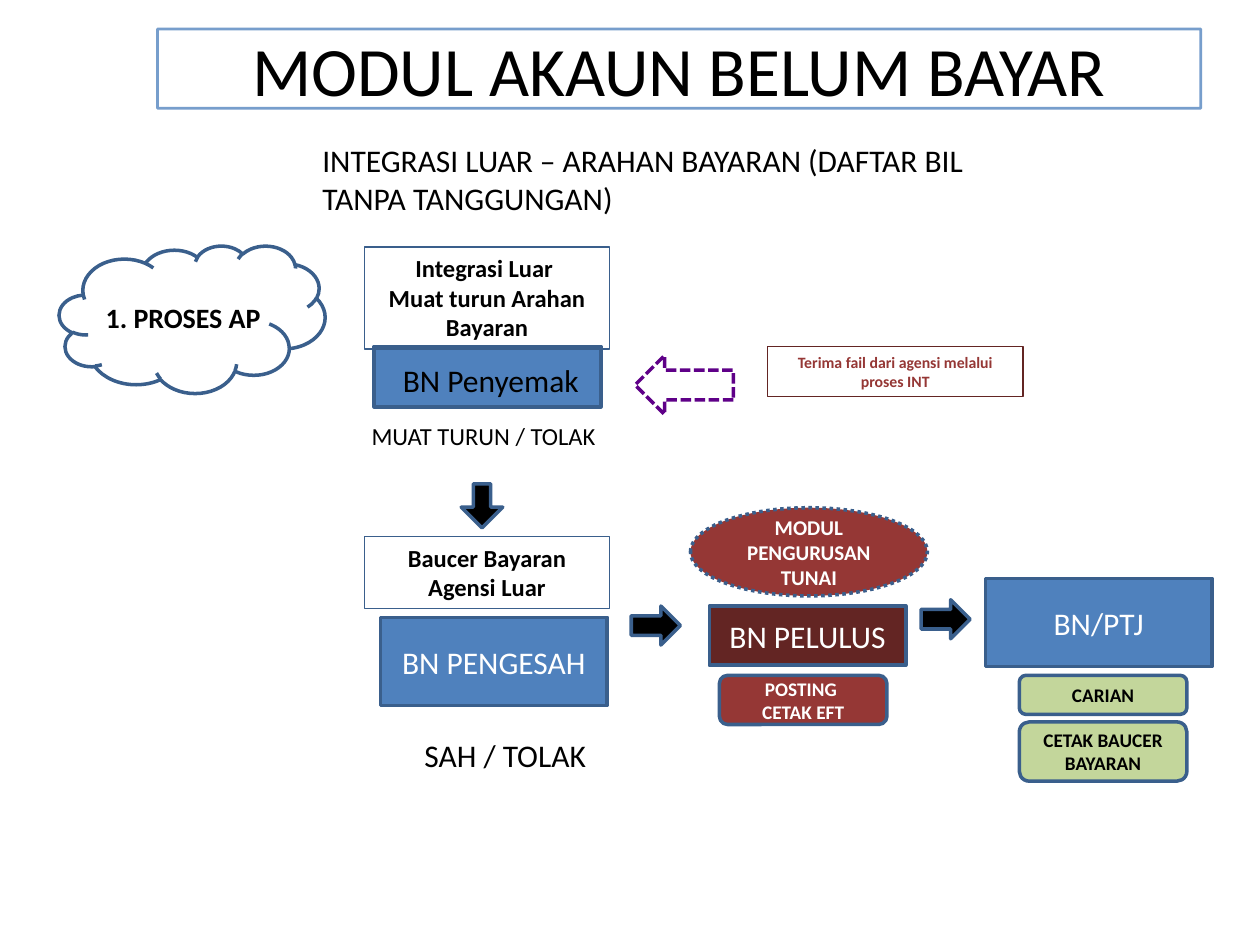
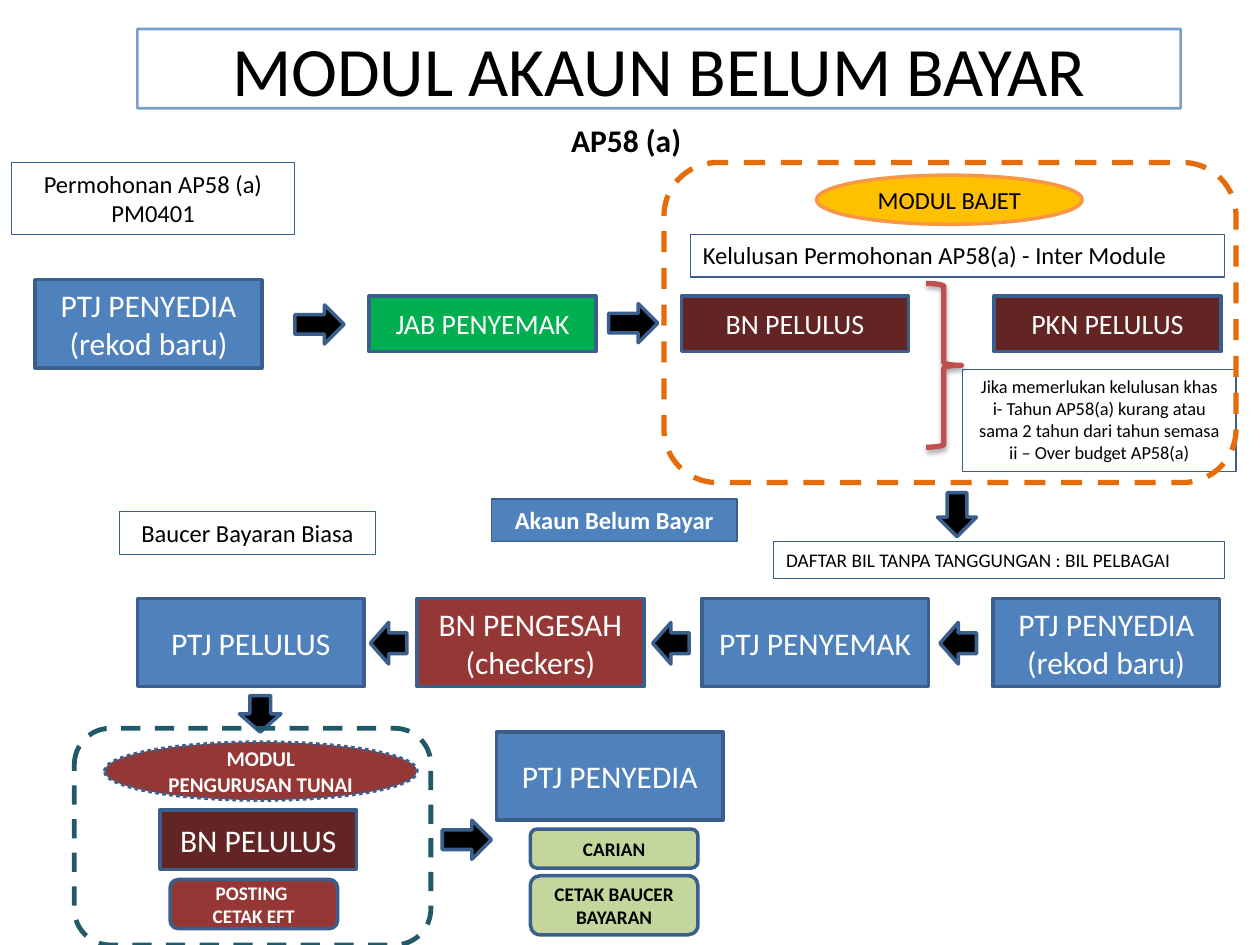
from dataclasses import dataclass

from lxml import etree
from pptx import Presentation
from pptx.dml.color import RGBColor
from pptx.enum.dml import MSO_LINE
from pptx.enum.shapes import MSO_SHAPE
from pptx.enum.text import MSO_ANCHOR, MSO_AUTO_SIZE, PP_ALIGN
from pptx.oxml.ns import qn
from pptx.util import Inches, Pt

RECT = MSO_SHAPE.RECTANGLE
ROUNDED = MSO_SHAPE.ROUNDED_RECTANGLE
OVAL = MSO_SHAPE.OVAL
CLOUD = MSO_SHAPE.CLOUD
ARROW = MSO_SHAPE.RIGHT_ARROW
BRACE = MSO_SHAPE.RIGHT_BRACE
DASH = MSO_LINE.DASH
SYS_DASH = MSO_LINE.SQUARE_DOT
SYS_DOT = MSO_LINE.ROUND_DOT
LEFT, CENTER = PP_ALIGN.LEFT, PP_ALIGN.CENTER
TOP, MIDDLE = MSO_ANCHOR.TOP, MSO_ANCHOR.MIDDLE
GROW = MSO_AUTO_SIZE.SHAPE_TO_FIT_TEXT
TITLE_ONLY = 5


@dataclass(frozen=True)
class Theme:
    font: str = "Calibri"
    black: str = "000000"
    white: str = "FFFFFF"
    blue: str = "4F81BD"
    outline: str = "3A5F8C"
    green: str = "00B050"
    pale_green: str = "C3D69B"
    red: str = "953735"
    maroon: str = "632523"
    brace: str = "C0504D"
    gold: str = "FFC000"
    gold_line: str = "F79646"
    orange: str = "E46C0A"
    teal: str = "215968"
    purple: str = "5F0088"
    title: float = 39.6
    step: float = 18
    approval: float = 16
    label: float = 14
    module: float = 12
    action: float = 11
    rule: float = 10.5
    note: float = 9


T = Theme()


def rgb(value):
    return RGBColor.from_string(value)


def write(tf, text, size=T.step, color=T.black, bold=False, align=CENTER,
          anchor=TOP, wrap=True):
    tf.word_wrap = wrap
    tf.vertical_anchor = anchor
    for i, line in enumerate(text.split("\n")):
        p = tf.paragraphs[0] if i == 0 else tf.add_paragraph()
        p.alignment = align
        r = p.add_run()
        r.text = line
        r.font.name = T.font
        r.font.size = Pt(size)
        r.font.bold = bold
        r.font.color.rgb = rgb(color)


def set_line(sp, color, width, dash=None):
    sp.line.color.rgb = rgb(color)
    sp.line.width = Pt(width)
    if dash:
        sp.line.dash_style = dash


def add_shape(s, kind, at, fill=None, line=T.outline, width=2, dash=None):
    sp = s.shapes.add_shape(kind, *map(Inches, at))
    sp.shadow.inherit = False
    if fill:
        sp.fill.solid()
        sp.fill.fore_color.rgb = rgb(fill)
    else:
        sp.fill.background()
    set_line(sp, line, width, dash)
    return sp


def add_title(s, left):
    sp = s.shapes.title
    sp.left, sp.top, sp.width, sp.height = map(Inches, (left, 0.23, 8.28, 0.63))
    set_line(sp, T.blue, 1.5)
    color = sp.line.color._xFill.find(qn("a:srgbClr"))
    etree.SubElement(color, qn("a:alpha"), val="76000")
    sp.text_frame.auto_size = MSO_AUTO_SIZE.NONE
    write(sp.text_frame, "MODUL AKAUN BELUM BAYAR", size=T.title, anchor=MIDDLE)


def add_text(s, at, text, **fmt):
    tf = s.shapes.add_textbox(*map(Inches, at)).text_frame
    write(tf, text, **fmt)
    tf.auto_size = GROW


def add_step(s, x, y, text, fill=T.blue, w=1.8, h=0.7, size=T.step):
    sp = add_shape(s, RECT, (x, y, w, h), fill)
    write(sp.text_frame, text, size=size, color=T.white, anchor=MIDDLE)


def add_label(s, at, text, fill=None, line=T.outline, size=T.label, **fmt):
    tf = add_shape(s, RECT, at, fill, line, 0.75).text_frame
    write(tf, text, size=size, **fmt)
    tf.auto_size = GROW


def add_module(s, at, text, fill=T.red, line=T.outline, dash=SYS_DOT,
               size=T.module, color=T.white, bold=True):
    sp = add_shape(s, OVAL, at, fill, line, dash=dash)
    write(sp.text_frame, text, size=size, color=color, bold=bold, anchor=MIDDLE)


def add_action(s, x, y, h, text, fill=T.pale_green, color=T.black):
    sp = add_shape(s, ROUNDED, (x, y, 1.33, h), fill)
    write(sp.text_frame, text, size=T.action, color=color, bold=True, anchor=MIDDLE)


def add_arrow(s, x, y, w=0.39, h=0.31, turn=0):
    sp = add_shape(s, ARROW, (x, y, w, h), T.black)
    sp.rotation = turn
    return sp


def add_brace(s, at):
    sp = add_shape(s, BRACE, at, line=T.brace, width=3)
    effects = sp._element.spPr.find(qn("a:effectLst"))
    shadow = etree.SubElement(effects, qn("a:outerShdw"), blurRad=str(Pt(3.1)),
                              dist=str(Pt(1.8)), dir="5400000", rotWithShape="0")
    color = etree.SubElement(shadow, qn("a:srgbClr"), val=T.black)
    etree.SubElement(color, qn("a:alpha"), val="35000")


def add_cash_release(s, x, y, module_at):
    add_module(s, module_at, "MODUL PENGURUSAN TUNAI")
    add_step(s, x, y, "BN PELULUS", T.maroon, w=1.56, h=0.47)
    add_action(s, x + 0.08, y + 0.55, 0.39, "POSTING \nCETAK EFT", T.red, T.white)


def add_voucher_actions(s, x, y):
    add_action(s, x, y, 0.31, "CARIAN")
    add_action(s, x, y + 0.37, 0.47, "CETAK BAUCER BAYARAN")


def build_external_integration(s):
    add_title(s, 1.25)
    add_text(s, (2.46, 1.07, 5.39, 0.71),
             "INTEGRASI LUAR – ARAHAN BAYARAN (DAFTAR BIL TANPA TANGGUNGAN)",
             align=LEFT)
    add_shape(s, CLOUD, (0.47, 1.95, 2.11, 1.17))
    add_text(s, (0.74, 2.34, 1.45, 0.37), "1. PROSES AP", size=T.approval,
             bold=True, align=LEFT, wrap=False)

    add_shape(s, RECT, (2.97, 2.75, 1.8, 0.48), T.blue)
    add_label(s, (2.89, 1.96, 1.95, 0.81),
              "Integrasi Luar \nMuat turun Arahan Bayaran", bold=True)
    add_text(s, (3.02, 2.82, 1.75, 0.4), "BN Penyemak")
    add_text(s, (2.85, 3.29, 2.12, 0.34), "MUAT TURUN / TOLAK",
             size=T.label, align=LEFT)
    incoming = add_shape(s, ARROW, (5.04, 2.82, 0.78, 0.47), line=T.purple,
                         dash=SYS_DASH)
    incoming.rotation = 180
    add_label(s, (6.09, 2.75, 2.03, 0.4),
              "Terima fail dari agensi melalui proses INT", line=T.maroon,
              size=T.note, color=T.red, bold=True)

    down = add_arrow(s, 3.65, 3.85, 0.35, 0.33, turn=90)
    down.adjustments[0] = 0.42
    add_label(s, (2.89, 4.26, 1.95, 0.57), "Baucer Bayaran Agensi Luar", bold=True)
    add_step(s, 3.02, 4.9, "BN PENGESAH")
    add_text(s, (3.27, 5.79, 1.77, 0.4), "SAH / TOLAK", align=LEFT)
    add_arrow(s, 5.01, 4.81)
    add_cash_release(s, 5.63, 4.81, (5.48, 4.03, 1.88, 0.7))
    add_arrow(s, 7.31, 4.76)
    add_step(s, 7.82, 4.59, "BN/PTJ")
    add_voucher_actions(s, 8.09, 5.36)


def build_ap58(s):
    add_title(s, 1.09)
    add_text(s, (0.83, 0.91, 8.28, 0.4), "AP58 (a)", bold=True)

    add_label(s, (0.09, 1.29, 2.25, 0.57), "Permohonan AP58 (a) PM0401")
    add_step(s, 0.28, 2.22, "PTJ PENYEDIA\n(rekod baru)")
    add_arrow(s, 2.34, 2.42)
    add_arrow(s, 4.83, 2.41)
    for x, text, fill in ((2.93, "JAB PENYEMAK", T.green),
                          (5.41, "BN PELULUS", T.maroon),
                          (7.89, "PKN PELULUS", T.maroon)):
        add_step(s, x, 2.35, text, fill, h=0.44, size=T.approval)

    add_module(s, (6.48, 1.39, 2.11, 0.39), "MODUL BAJET", T.gold, T.gold_line,
               dash=None, size=T.label, color=T.black, bold=False)
    add_label(s, (5.48, 1.86, 4.24, 0.34),
              "Kelulusan Permohonan AP58(a) - Inter Module", align=LEFT)
    add_brace(s, (7.35, 2.25, 0.28, 1.3))
    add_label(s, (7.64, 2.93, 2.17, 0.81),
              "Jika memerlukan kelulusan khas\n"
              "i- Tahun AP58(a) kurang atau sama 2 tahun dari tahun semasa\n"
              "ii – Over budget AP58(a)", size=T.rule)
    add_shape(s, ROUNDED, (5.27, 1.29, 4.54, 2.54), line=T.orange, width=3, dash=DASH)

    add_arrow(s, 7.42, 3.93, 0.35, turn=90)
    add_label(s, (6.14, 4.3, 3.58, 0.29),
              "DAFTAR BIL TANPA TANGGUNGAN : BIL PELBAGAI",
              size=T.action, align=LEFT)
    add_label(s, (3.9, 3.96, 1.95, 0.34), "Akaun Belum Bayar", fill=T.blue,
              color=T.white, bold=True)
    add_label(s, (0.95, 4.06, 2.03, 0.34), "Baucer Bayaran Biasa")
    for x, text, fill in ((7.88, "PTJ PENYEDIA\n(rekod baru)", T.blue),
                          (5.57, "PTJ PENYEMAK", T.blue),
                          (3.31, "BN PENGESAH\n(checkers)", T.red),
                          (1.09, "PTJ PELULUS", T.blue)):
        add_step(s, x, 4.75, text, fill)
    for x in (7.46, 5.18, 2.94):
        add_arrow(s, x, 4.94, 0.29, 0.33, turn=180)

    add_arrow(s, 1.92, 5.5, 0.29, 0.33, turn=90)
    add_cash_release(s, 1.27, 6.43, (0.83, 5.89, 2.48, 0.46))
    add_shape(s, ROUNDED, (0.59, 5.78, 2.83, 1.72), line=T.teal, width=2.75, dash=DASH)
    add_arrow(s, 3.51, 6.51)
    add_step(s, 3.94, 5.81, "PTJ PENYEDIA")
    add_voucher_actions(s, 4.21, 6.58)


def main():
    prs = Presentation()
    prs.slide_width, prs.slide_height = Inches(10), Inches(7.5)
    for build in (build_external_integration, build_ap58):
        build(prs.slides.add_slide(prs.slide_layouts[TITLE_ONLY]))
    prs.save("out.pptx")


if __name__ == "__main__":
    main()
